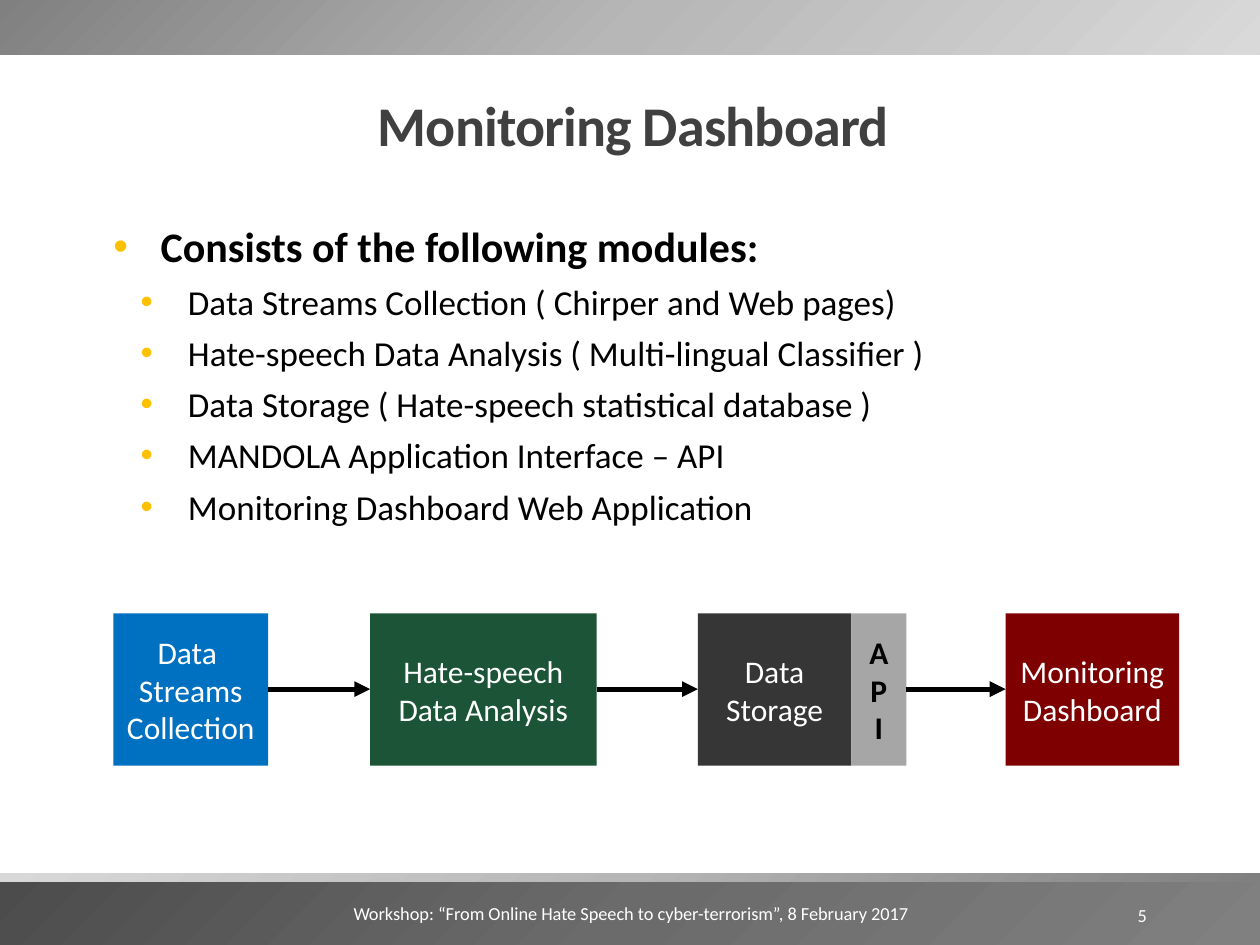
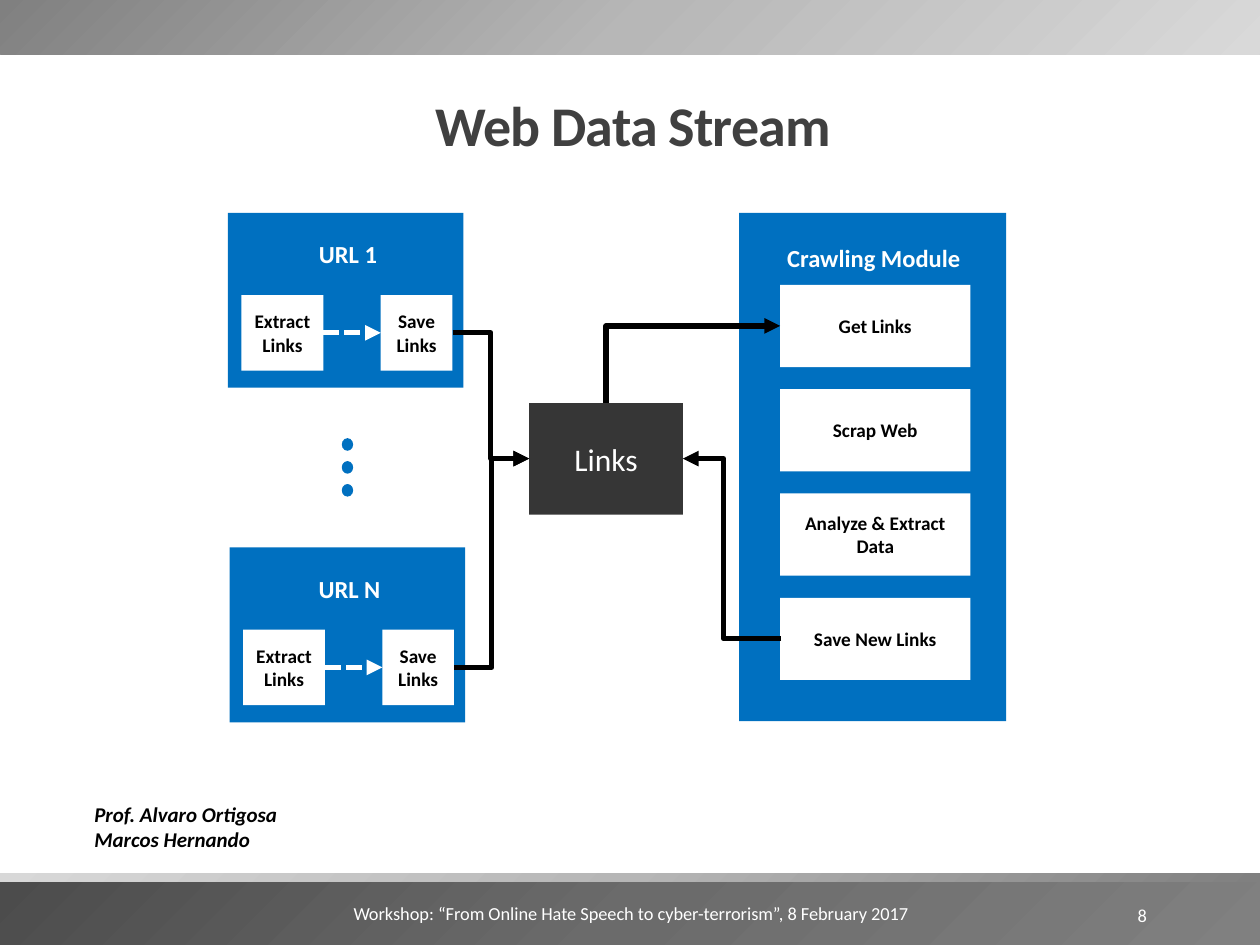
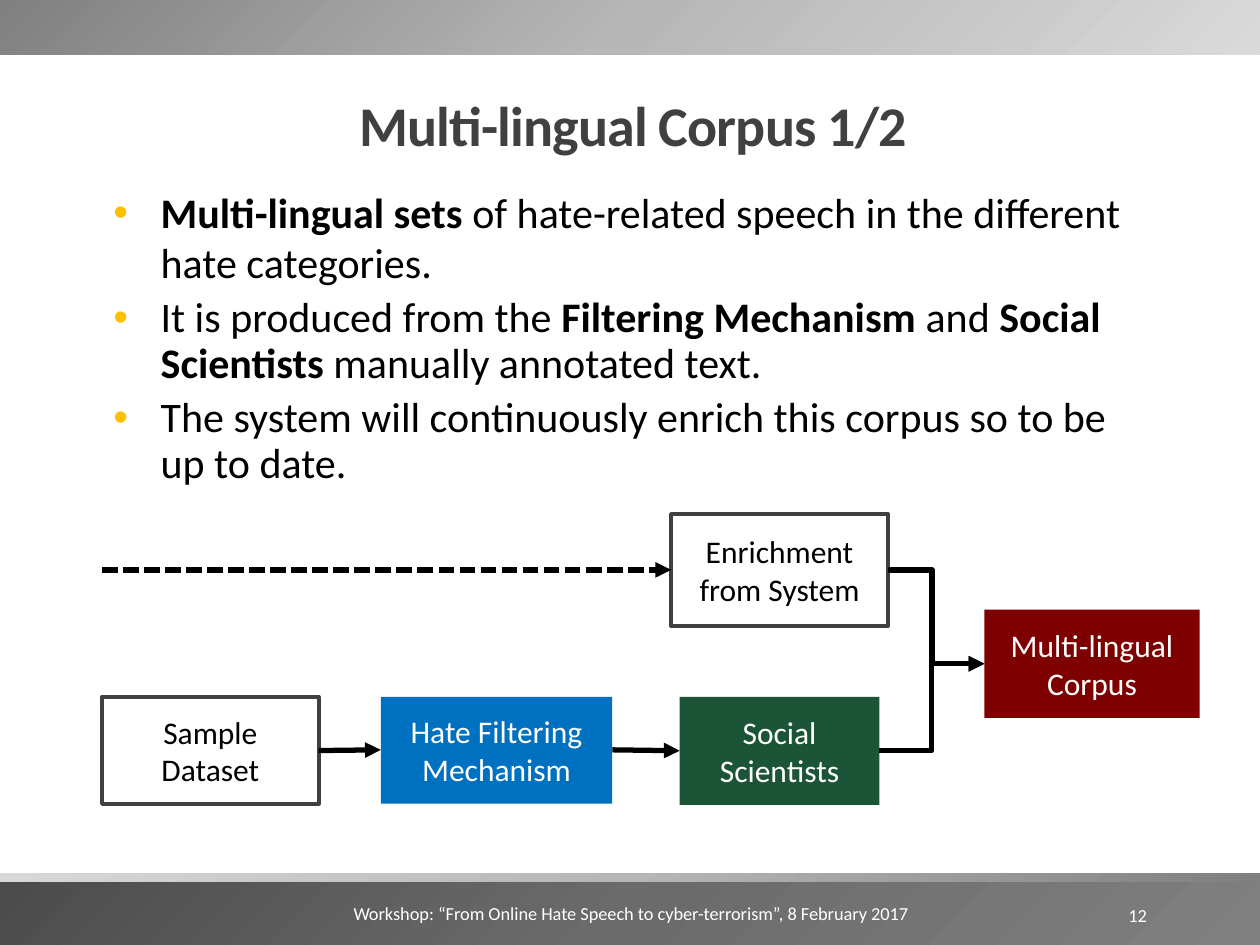
from dataclasses import dataclass

import pptx
import pptx.util
import pptx.dml.color
import pptx.enum.dml
import pptx.enum.shapes
import pptx.enum.text
import pptx.oxml
import pptx.oxml.ns

Pt = pptx.util.Pt
SHAPE = pptx.enum.shapes.MSO_SHAPE
CONNECTOR = pptx.enum.shapes.MSO_CONNECTOR
ALIGN = pptx.enum.text.PP_ALIGN
ANCHOR = pptx.enum.text.MSO_ANCHOR


@dataclass(frozen=True)
class Theme:
    font: str = "Calibri"
    black: str = "000000"
    white: str = "FFFFFF"
    title: str = "404040"
    blue: str = "0070C0"
    green: str = "1C5438"
    dark: str = "363636"
    grey: str = "A6A6A6"
    red: str = "7E0000"
    bullet: str = "FFC000"
    footer_band: tuple = ("4C4C4C", "6B6B6B", "808080")
    thin_band: tuple = ("808080", "B6B6B6", "D8D8D8")
    top_band: tuple = ("808080", "B7B7B7", "D9D9D9")
    title_size: float = 32
    body_size: float = 24
    item_size: float = 20
    box_size: float = 18
    heading_size: float = 14
    credit_size: float = 12
    label_size: float = 11
    footer_size: float = 10.5
    line_width: float = 3
    frame_width: float = 2.25


THEME = Theme()
FOOTER = "Workshop: “From Online Hate Speech to cyber-terrorism”, 8 February 2017"
DIAGONAL = '<a:lin ang="2700000" scaled="0"/>'
RADIAL = '<a:path path="circle"><a:fillToRect l="100000" t="100000"/></a:path>'


def rgb(value):
    return pptx.dml.color.RGBColor.from_string(value)


def xml(tag, attributes="", content=""):
    namespace = pptx.oxml.ns.nsdecls("a")
    return pptx.oxml.parse_xml(f"<a:{tag} {namespace} {attributes}>{content}</a:{tag}>")


def set_values(target, values):
    for name, value in values.items():
        setattr(target, name, value)


def set_font(font, size, color, **values):
    set_values(font, {"name": THEME.font, "size": Pt(size), "bold": False, **values})
    font.color.rgb = rgb(color)


def set_frame(frame, anchor, margins=(7.2, 3.6)):
    horizontal, vertical = (Pt(margin) for margin in margins)
    set_values(frame, {
        "word_wrap": True, "vertical_anchor": anchor,
        "auto_size": pptx.enum.text.MSO_AUTO_SIZE.NONE,
        "margin_left": horizontal, "margin_right": horizontal,
        "margin_top": vertical, "margin_bottom": vertical,
    })


def write_lines(frame, text, align, size, color, **values):
    for index, line in enumerate(text.split("\n")):
        paragraph = frame.paragraphs[0] if index == 0 else frame.add_paragraph()
        paragraph.alignment = align
        run = paragraph.add_run()
        run.text = line
        set_font(run.font, size, color, **values)


def add_box(slide, area, fill, text="", size=THEME.box_size, color=THEME.white,
            frame_color=None, bold=False, kind=SHAPE.RECTANGLE):
    shape = slide.shapes.add_shape(kind, *map(Pt, area))
    shape.shadow.inherit = False
    shape.fill.solid()
    shape.fill.fore_color.rgb = rgb(fill)
    if frame_color:
        shape.line.color.rgb = rgb(frame_color)
        shape.line.width = Pt(THEME.frame_width)
    else:
        shape.line.fill.background()
    if text:
        set_frame(shape.text_frame, ANCHOR.MIDDLE)
        write_lines(shape.text_frame, text, ALIGN.CENTER, size, color, bold=bold)
    return shape


def add_label(slide, area, text, align, anchor, size, color, **values):
    frame = slide.shapes.add_textbox(*map(Pt, area)).text_frame
    set_frame(frame, anchor)
    write_lines(frame, text, align, size, color, **values)


def add_arrow(slide, start, end, color=THEME.black, dashed=False, bend=None):
    kind = CONNECTOR.STRAIGHT if bend is None else CONNECTOR.ELBOW
    connector = slide.shapes.add_connector(kind, *map(Pt, (*start, *end)))
    properties = connector.element.spPr
    connector.line.color.rgb = rgb(color)
    connector.line.width = Pt(THEME.line_width)
    if dashed:
        connector.line.dash_style = pptx.enum.dml.MSO_LINE.SQUARE_DOT
    connector.line._get_or_add_ln().append(xml("tailEnd", 'type="triangle"'))
    properties.append(xml("effectLst"))
    if bend is not None:
        geometry = properties.find(pptx.oxml.ns.qn("a:prstGeom"))
        guide = f'<a:gd name="adj1" fmla="val {round(bend * 100000)}"/>'
        geometry.replace(geometry[0], xml("avLst", content=guide))
    return connector


def add_corner_arrow(slide, start, end):
    width, height = end[0] - start[0], start[1] - end[1]
    middle_x, middle_y = start[0] + width / 2, end[1] + height / 2
    connector = add_arrow(
        slide, (middle_x - height / 2, middle_y - width / 2),
        (middle_x + height / 2, middle_y + width / 2), bend=0.5)
    properties = connector.element.spPr
    geometry = properties.find(pptx.oxml.ns.qn("a:prstGeom"))
    geometry.set("prst", "bentConnector2")
    geometry.replace(geometry[0], xml("avLst"))
    for name, value in {"rot": "5400000", "flipH": "1", "flipV": "1"}.items():
        properties.find(pptx.oxml.ns.qn("a:xfrm")).set(name, value)


def add_band(slide, top, height, colors, direction):
    band = add_box(slide, (0, top, 720, height), colors[0])
    stops = "".join(
        f'<a:gs pos="{index * 50000}"><a:srgbClr val="{color}"/></a:gs>'
        for index, color in enumerate(colors))
    properties = band.element.spPr
    solid = properties.find(pptx.oxml.ns.qn("a:solidFill"))
    properties.replace(solid, xml(
        "gradFill", 'rotWithShape="1"', f"<a:gsLst>{stops}</a:gsLst>{direction}"))


def add_slide(presentation, title, number):
    slide = presentation.slides.add_slide(presentation.slide_layouts[5])
    add_band(slide, 504, 36, THEME.footer_band, DIAGONAL)
    add_band(slide, 499, 5, THEME.thin_band, RADIAL)
    add_band(slide, 0, 31, THEME.top_band, DIAGONAL)
    heading = slide.shapes.title
    set_values(heading, dict(zip(
        ("left", "top", "width", "height"), map(Pt, (64.8, 48.3, 594, 45.4)))))
    set_frame(heading.text_frame, ANCHOR.BOTTOM)
    write_lines(heading.text_frame, title, ALIGN.CENTER, THEME.title_size,
                THEME.title, bold=True)
    paragraph = heading.text_frame.paragraphs[0]
    paragraph.line_spacing = 0.85
    paragraph.runs[0].font._element.set("spc", "-50")
    add_label(slide, (159.1, 511.9, 403.2, 28.8), FOOTER, ALIGN.CENTER,
              ANCHOR.TOP, THEME.footer_size, THEME.white)
    add_label(slide, (584.6, 508.3, 77.8, 28.8), number, ALIGN.RIGHT,
              ANCHOR.MIDDLE, THEME.footer_size, THEME.white)
    return slide


def add_bullets(slide, top, items):
    frame = slide.shapes.add_textbox(*map(Pt, (64.8, top, 594, 372.2))).text_frame
    set_frame(frame, ANCHOR.TOP, (0, 3.6))
    for index, (level, spacing, runs) in enumerate(items):
        paragraph = frame.paragraphs[0] if index == 0 else frame.add_paragraph()
        set_values(paragraph, {"level": level, "line_spacing": spacing})
        if index:
            paragraph.space_before = Pt(5.3)
        properties = paragraph._p.get_or_add_pPr()
        properties.set("marL", str(Pt(27 + 15.6 * level)))
        properties.set("indent", str(-Pt(27)))
        properties.append(xml("buClr", content=f'<a:srgbClr val="{THEME.bullet}"/>'))
        properties.append(xml("buFont", 'typeface="Arial"'))
        properties.append(xml("buChar", 'char="•"'))
        size = THEME.item_size if level else THEME.body_size
        for text, bold in runs:
            run = paragraph.add_run()
            run.text = text
            set_font(run.font, size, THEME.black, bold=bold)


def add_white_box(slide, area, text):
    add_box(slide, area, THEME.white, text, THEME.label_size, THEME.black, bold=True)


def add_panel(slide, area, heading_area, heading):
    add_box(slide, area, THEME.blue)
    add_box(slide, heading_area, THEME.blue, heading, THEME.heading_size, bold=True)


def add_url_panel(slide, left, top, name):
    middle = top + 68.6
    add_panel(slide, (left, top, 134.6, 100), (left + 8.8, top + 10.5, 119.5, 26), name)
    add_white_box(slide, (left + 7.7, top + 47, 46.8, 43.2), "Extract Links")
    add_white_box(slide, (left + 87.3, top + 47, 41, 43.2), "Save Links")
    add_arrow(slide, (left + 54.5, middle), (left + 87.3, middle), THEME.white, True)
    return left + 128.3, middle


def build_dashboard(presentation):
    slide = add_slide(presentation, "Monitoring Dashboard", "5")
    modules = (
        "Data Streams Collection ( Chirper and Web pages)",
        "Hate-speech Data Analysis ( Multi-lingual Classifier )",
        "Data Storage ( Hate-speech statistical database )",
        "MANDOLA Application Interface – API",
        "Monitoring Dashboard Web Application",
    )
    add_bullets(slide, 108, [
        (0, 1.5, [("Consists of the following modules:", True)]),
        *((1, 1.0, [(module, False)]) for module in modules),
    ])
    stages = (
        (64.8, 88.4, THEME.blue, "Data \nStreams\nCollection"),
        (211.5, 129.4, THEME.green, "Hate-speech Data Analysis"),
        (398.8, 87.7, THEME.dark, "Data Storage"),
        (574.6, 99.2, THEME.red, "Monitoring Dashboard"),
    )
    for left, width, color, text in stages:
        add_box(slide, (left, 350.5, width, 87), color, text)
    add_box(slide, (486.5, 350.5, 31.4, 87), THEME.grey, "A\nP\nI",
            color=THEME.black, bold=True)
    for start, end in ((153.2, 211.5), (340.9, 398.8), (517.9, 574.6)):
        add_arrow(slide, (start, 393.8), (end, 393.8))


def build_web_stream(presentation):
    slide = add_slide(presentation, "Web Data Stream", "8")
    first_exit = add_url_panel(slide, 130.3, 121.6, "URL 1")
    last_exit = add_url_panel(slide, 131.2, 312.8, "URL N")
    for index in range(3):
        add_box(slide, (195.3, 250.4 + 13.1 * index, 6.5, 7.2), THEME.blue,
                kind=SHAPE.OVAL)
    add_box(slide, (302.4, 230.3, 87.8, 63.8), THEME.dark, "Links")
    add_panel(slide, (422.3, 121.6, 152.6, 290.5), (431.3, 133.2, 136.1, 28.1),
              "Crawling Module")
    steps = ("Get Links", "Scrap Web", "Analyze & Extract Data", "Save New Links")
    for index, step in enumerate(steps):
        add_white_box(slide, (445.8, 162.8 + 59.6 * index, 108.7, 47), step)
    add_arrow(slide, first_exit, (302.4, 262.1), bend=0.5)
    add_arrow(slide, last_exit, (302.4, 262.1), bend=0.5)
    add_arrow(slide, (446.4, 365), (390.2, 262.1), bend=0.586)
    add_corner_arrow(slide, (346.3, 230.3), (445.8, 186.3))
    add_label(slide, (46.8, 454.3, 673.2, 36), "Prof. Alvaro Ortigosa\nMarcos Hernando",
              ALIGN.LEFT, ANCHOR.TOP, THEME.credit_size, THEME.black,
              bold=True, italic=True)


def build_corpus(presentation):
    slide = add_slide(presentation, "Multi-lingual Corpus 1/2", "12")
    add_bullets(slide, 103, [
        (0, 1.0, [("Multi-lingual sets ", True),
                  ("of hate-related speech in the different hate categories.", False)]),
        (0, 0.9, [("It is produced from the ", False), ("Filtering Mechanism ", True),
                  ("and ", False), ("Social Scientists ", True),
                  ("manually annotated text.", False)]),
        (0, 0.9, [("The system will continuously enrich this corpus so to be "
                   "up to date.", False)]),
    ])
    filled = (
        ((217.6, 398.2, 132.3, 61), THEME.blue, "Hate Filtering Mechanism"),
        ((562.5, 348.4, 123, 61.8), THEME.red, "Multi-lingual Corpus"),
        ((388.4, 398.2, 114.1, 61.8), THEME.green, "Social Scientists"),
    )
    for area, color, text in filled:
        add_box(slide, area, color, text)
    framed = (
        ((58.3, 398.2, 123.8, 61.2), "Sample Dataset"),
        ((383.5, 293.8, 124, 64), "Enrichment from System"),
    )
    for area, text in framed:
        add_box(slide, area, THEME.white, text, color=THEME.black,
                frame_color=THEME.title)
    add_arrow(slide, (182.1, 428.9), (217.6, 428.5))
    add_arrow(slide, (349.9, 428.5), (388.4, 429))
    add_arrow(slide, (58.3, 325.7), (383.5, 325.7), dashed=True)
    add_arrow(slide, (502.5, 429), (562.5, 379.3), bend=0.5)
    add_arrow(slide, (507.5, 325.7), (562.5, 379.3), bend=0.456)


def main():
    presentation = pptx.Presentation()
    presentation.slide_width, presentation.slide_height = Pt(720), Pt(540)
    build_dashboard(presentation)
    build_web_stream(presentation)
    build_corpus(presentation)
    presentation.save("out.pptx")


if __name__ == "__main__":
    main()
